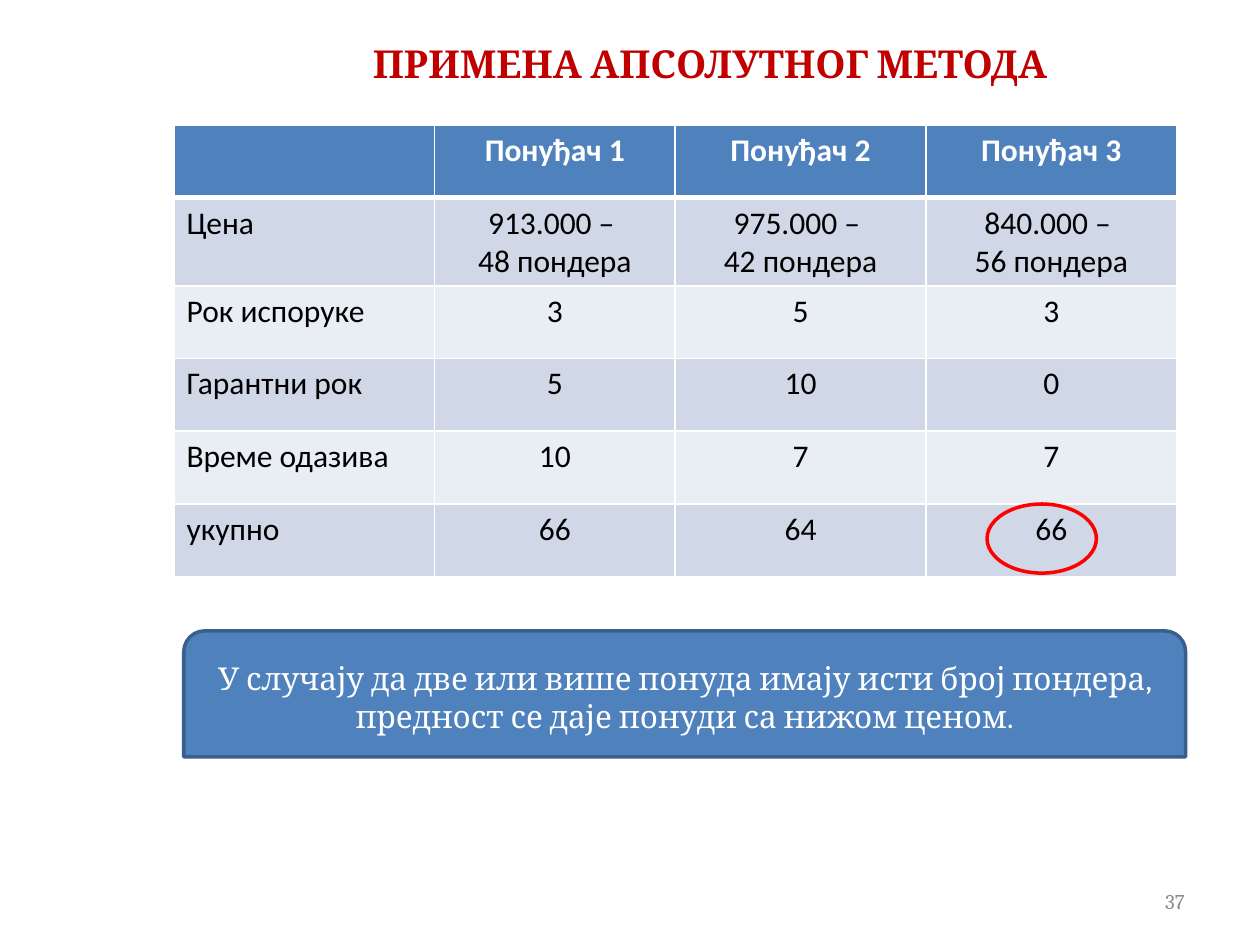
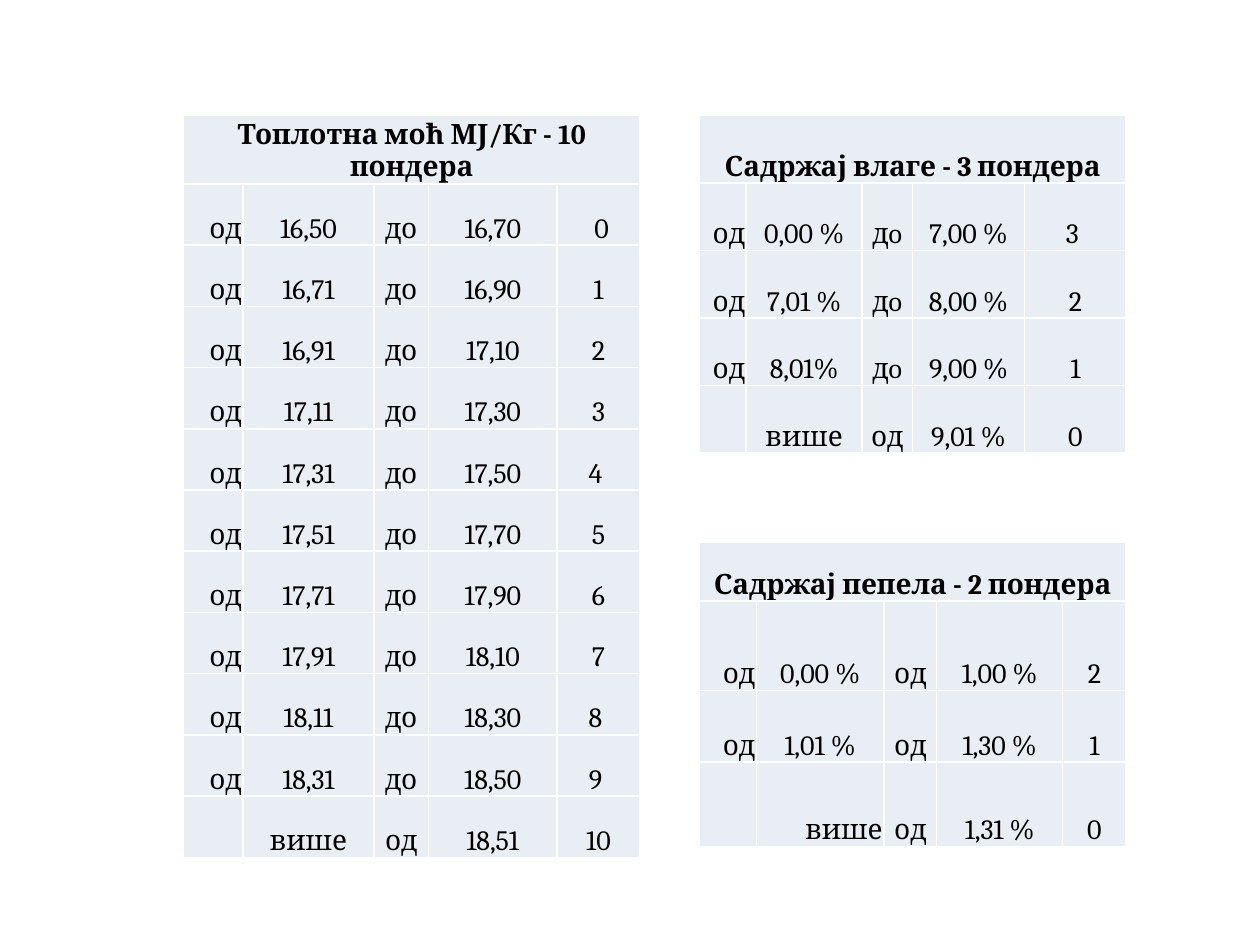
"""Build two slides on weighting tender offers with the absolute method."""
from dataclasses import dataclass

from lxml import etree
from pptx import Presentation
from pptx.dml.color import RGBColor
from pptx.enum.shapes import MSO_SHAPE
from pptx.enum.text import MSO_ANCHOR, PP_ALIGN
from pptx.oxml.ns import qn
from pptx.util import Pt

LEFT, CENTER, RIGHT = PP_ALIGN.LEFT, PP_ALIGN.CENTER, PP_ALIGN.RIGHT
TOP, MIDDLE, BOTTOM = MSO_ANCHOR.TOP, MSO_ANCHOR.MIDDLE, MSO_ANCHOR.BOTTOM
ELLIPSE, ROUND_TOP = MSO_SHAPE.OVAL, MSO_SHAPE.ROUND_2_SAME_RECTANGLE


@dataclass(frozen=True)
class Theme:
    white: str = "FFFFFF"
    black: str = "000000"
    title: str = "C00000"
    accent: str = "4F81BD"
    accent_edge: str = "3A5F8C"
    highlight: str = "FF0000"
    band_dark: str = "D0D8E8"
    band_light: str = "E9EDF4"
    muted: str = "8C8C8C"
    serif: str = "Cambria"
    sans: str = "Calibri"
    title_size: float = 22
    body_size: float = 18
    scale_size: float = 16
    footer_size: float = 12


def write(frame, text, *, size, font, color, bold=False, align=LEFT):
    for index, line in enumerate(text.split("\n")):
        paragraph = frame.add_paragraph() if index else frame.paragraphs[0]
        paragraph.alignment = align
        run = paragraph.add_run()
        run.text = line
        run.font.size = Pt(size)
        run.font.name = font
        run.font.bold = bold
        run.font.color.rgb = RGBColor.from_string(color)


def set_borders(cell, color, widths):
    properties = cell._tc.get_or_add_tcPr()
    for side, width in zip("LRTB", widths):
        line = etree.SubElement(properties, qn(f"a:ln{side}"), w=str(Pt(width)))
        fill = etree.SubElement(line, qn("a:solidFill"))
        etree.SubElement(fill, qn("a:srgbClr"), val=color)


class Deck:
    def __init__(self, theme):
        self.theme = theme
        self.presentation = Presentation()
        self.presentation.slide_width = Pt(720)
        self.presentation.slide_height = Pt(540)
        self.slide = None

    def new_slide(self):
        self.slide = self.presentation.slides.add_slide(self.presentation.slide_layouts[6])

    def text(self, content, box, *, anchor=TOP, **style):
        frame = self.slide.shapes.add_textbox(*map(Pt, box)).text_frame
        frame.word_wrap = True
        frame.vertical_anchor = anchor
        write(frame, content, **style)
        return frame

    def title(self, content, box):
        theme = self.theme
        frame = self.text(content, box, size=theme.title_size, font=theme.serif,
                          color=theme.title, bold=True, align=CENTER)
        frame.margin_left = Pt(13.7)

    def page_number(self, number):
        theme = self.theme
        self.text(number, (516, 500.5, 168, 28.75), anchor=MIDDLE, align=RIGHT,
                  size=theme.footer_size, font=theme.serif, color=theme.muted)

    def shape(self, kind, box, edge, fill=None):
        shape = self.slide.shapes.add_shape(kind, *map(Pt, box))
        shape.shadow.inherit = False
        shape.line.color.rgb = RGBColor.from_string(edge)
        shape.line.width = Pt(2)
        if fill:
            shape.fill.solid()
            shape.fill.fore_color.rgb = RGBColor.from_string(fill)
        else:
            shape.fill.background()
        return shape

    def callout(self, content, box):
        theme = self.theme
        frame = self.shape(ROUND_TOP, box, theme.accent_edge, theme.accent).text_frame
        frame.word_wrap = True
        frame.vertical_anchor = MIDDLE
        write(frame, content, size=theme.body_size, font=theme.serif,
              color=theme.white, align=CENTER)

    def grid(self, position, widths, heights):
        size = sum(widths), sum(heights)
        table = self.slide.shapes.add_table(
            len(heights), len(widths), *map(Pt, (*position, *size))).table
        table.first_row = table.horz_banding = False
        for column, width in zip(table.columns, widths):
            column.width = Pt(width)
        for row, height in zip(table.rows, heights):
            row.height = Pt(height)
        return table

    def cell(self, cell, content, fill, borders=(1, 1, 1, 1), **style):
        set_borders(cell, self.theme.white, borders)
        cell.fill.solid()
        cell.fill.fore_color.rgb = RGBColor.from_string(fill)
        if content:
            write(cell.text_frame, content, **style)

    def offers_table(self, position, widths, height, rows):
        theme = self.theme
        table = self.grid(position, widths, [height] * len(rows))
        bands = theme.band_light, theme.band_dark
        for r, row in enumerate(rows):
            header = r == 0
            borders = (1, 1, 3 if r == 1 else 1, 3 if header else 1)
            for c, content in enumerate(row):
                self.cell(table.cell(r, c), content,
                          theme.accent if header else bands[r % 2], borders,
                          size=theme.body_size, font=theme.sans, bold=header,
                          color=theme.white if header else theme.black,
                          align=CENTER if c else LEFT)

    def scale_table(self, position, widths, heights, heading, rows, right_aligned=()):
        theme = self.theme
        table = self.grid(position, widths, heights)
        blanks = [""] * (len(widths) - 1)
        for r, row in enumerate([[heading, *blanks], *rows]):
            for c, content in enumerate(row):
                cell = table.cell(r, c)
                to_right = r and c == 0 or (r, c) in right_aligned
                cell.margin_left = cell.margin_right = cell.margin_top = Pt(0.72)
                cell.margin_bottom = Pt(0)
                cell.vertical_anchor = BOTTOM
                self.cell(cell, content, theme.band_light, size=theme.scale_size,
                          font=theme.serif, color=theme.black, bold=r == 0,
                          align=RIGHT if to_right else CENTER)
        table.cell(0, 0).merge(table.cell(0, len(widths) - 1))


def build_offers(deck):
    deck.new_slide()
    deck.page_number("37")
    deck.offers_table((99.4, 71.5), (149, 137.4, 143.3, 143.3), 41.5, [
        ("", "Понуђач 1", "Понуђач 2", "Понуђач 3"),
        ("Цена", "913.000 – \n48 пондера", "975.000 – \n42 пондера", "840.000 – \n56 пондера"),
        ("Рок испоруке", "3", "5", "3"),
        ("Гарантни рок", "5", "10", "0"),
        ("Време одазива", "10", "7", "7"),
        ("укупно", "66", "64", "66"),
    ])
    deck.title("ПРИМЕНА АПСОЛУТНОГ МЕТОДА", (156, 19.5, 493, 34))
    deck.shape(ELLIPSE, (564, 288, 62.5, 39.5), deck.theme.highlight)
    deck.callout("У случају да две или више понуда имају исти број пондера, "
                 "предност се даје понуди са нижом ценом.", (105, 360.5, 572.5, 72))


def build_scales(deck):
    deck.new_slide()
    heat_points = (" 0", "1", "2", "3", "4 ", "5", "6", "7", "8 ", "9 ")
    heat_rows = []
    for step, points in enumerate(heat_points):
        upper = 16.7 + 0.2 * step
        lower = upper - (0.19 if step else 0.2)
        limits = [f"{limit:.2f}".replace(".", ",") for limit in (lower, upper)]
        heat_rows.append(("од", limits[0], "до", limits[1], points))
    deck.scale_table((105, 66), (33.8, 75, 31, 73.7, 47.2), [35] * 12,
                     "Топлотна моћ МЈ/Кг - 10 пондера",
                     [*heat_rows, ("", "више", "од", "18,51", "10")])
    deck.scale_table((399.8, 66), (26.6, 66.2, 28.8, 64.1, 58.1), [38.6] * 5,
                     "Садржај влаге - 3 пондера", [
                         ("од", "0,00 %", "дo", "7,00 %", "3 "),
                         ("од", "7,01 %", "дo", "8,00 %", "2"),
                         ("од", "8,01%", "дo", "9,00 %", "1"),
                         ("", "више", "од", "9,01 %", "0"),
                     ])
    deck.scale_table((399.8, 309.9), (32.4, 72.9, 30.2, 72, 36.2), (33.6, 51, 41, 48.2),
                     "Садржај пепела - 2 пондера", [
                         ("од", "0,00 %", "од", "1,00 %", "2"),
                         ("од", "1,01 %", "од", "1,30 %", "1"),
                         ("", "више", "од", "1,31 %", "0"),
                     ], right_aligned={(3, 1)})


def main():
    deck = Deck(Theme())
    build_offers(deck)
    build_scales(deck)
    deck.presentation.save("out.pptx")


if __name__ == "__main__":
    main()
